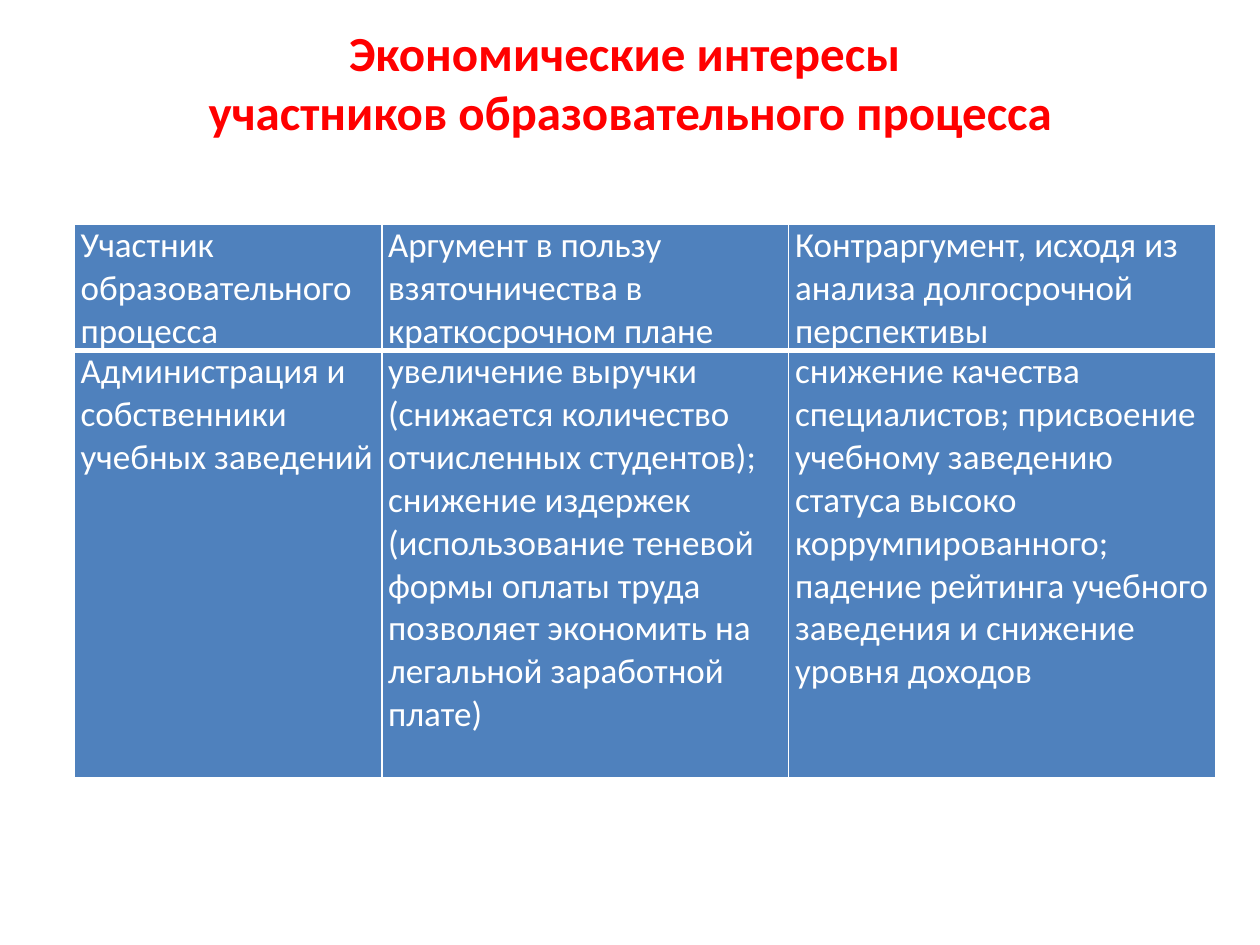
from lxml.etree import SubElement
from pptx import Presentation
from pptx.dml.color import RGBColor
from pptx.enum.text import MSO_ANCHOR, MSO_AUTO_SIZE, PP_ALIGN
from pptx.oxml.ns import qn
from pptx.util import Inches, Pt

RED = RGBColor(0xFF, 0x00, 0x00)
WHITE = RGBColor(0xFF, 0xFF, 0xFF)
BLUE = RGBColor(0x4F, 0x81, 0xBD)
FONT = "Calibri"

TITLE_LINES = ["Экономические интересы ", "участников образовательного процесса"]
COLUMN_WIDTHS = [2.44, 3.23, 3.39]
ROW_HEIGHTS = [0.94, 3.39]
INTERESTS = [
    [
        "Участник образовательного процесса",
        "Аргумент в пользу взяточничества в краткосрочном плане",
        "Контраргумент, исходя из анализа долгосрочной перспективы",
    ],
    [
        "Администрация и собственники учебных заведений",
        "увеличение выручки (снижается количество отчисленных студентов); "
        "снижение издержек (использование теневой формы оплаты труда "
        "позволяет экономить на легальной заработной плате)",
        "снижение качества специалистов; присвоение учебному заведению "
        "статуса высоко коррумпированного; падение рейтинга учебного "
        "заведения и снижение уровня доходов",
    ],
]


def add_run(paragraph, text, size, color, bold=False):
    run = paragraph.add_run()
    run.text = text
    run.font.name = FONT
    run.font.size = Pt(size)
    run.font.bold = bold
    run.font.color.rgb = color


def fill_title(title):
    title.left, title.top = Inches(0), Inches(0.13)
    title.width, title.height = Inches(10), Inches(1.04)
    frame = title.text_frame
    frame.word_wrap = True
    frame.auto_size = MSO_AUTO_SIZE.SHAPE_TO_FIT_TEXT
    frame.vertical_anchor = MSO_ANCHOR.TOP
    for index, line in enumerate(TITLE_LINES):
        paragraph = frame.add_paragraph() if index else frame.paragraphs[0]
        paragraph.alignment = PP_ALIGN.CENTER
        paragraph.space_before = Pt(0)
        add_run(paragraph, line, 28, RED, bold=True)


def set_borders(cell, widths):
    """Draw white borders; widths maps the sides L, R, T, B to points."""
    properties = cell._tc.get_or_add_tcPr()
    for position, (side, width) in enumerate(widths.items()):
        line = SubElement(properties, qn(f"a:ln{side}"), w=str(Pt(width)))
        fill = SubElement(line, qn("a:solidFill"))
        SubElement(fill, qn("a:srgbClr"), val=str(WHITE))
        properties.insert(position, line)  # borders precede the cell fill


def fill_cell(cell, text, is_header):
    cell.margin_left = cell.margin_right = Inches(0.05)
    cell.margin_top = cell.margin_bottom = Inches(0)
    cell.vertical_anchor = MSO_ANCHOR.TOP
    cell.fill.solid()
    cell.fill.fore_color.rgb = BLUE
    add_run(cell.text_frame.paragraphs[0], text, 20, WHITE)
    top, bottom = (1, 3) if is_header else (3, 1)
    set_borders(cell, {"L": 1, "R": 1, "T": top, "B": bottom})


def add_interests_table(slide):
    table = slide.shapes.add_table(
        len(ROW_HEIGHTS), len(COLUMN_WIDTHS), Inches(0.59), Inches(1.78),
        Inches(sum(COLUMN_WIDTHS)), Inches(sum(ROW_HEIGHTS)),
    ).table
    for column, width in zip(table.columns, COLUMN_WIDTHS):
        column.width = Inches(width)
    for row_index, (row, height) in enumerate(zip(table.rows, ROW_HEIGHTS)):
        row.height = Inches(height)
        for cell, text in zip(row.cells, INTERESTS[row_index]):
            fill_cell(cell, text, is_header=row_index == 0)


def main():
    presentation = Presentation()
    presentation.slide_width = Inches(10)
    presentation.slide_height = Inches(7.5)
    slide = presentation.slides.add_slide(presentation.slide_layouts[5])
    fill_title(slide.shapes.title)
    add_interests_table(slide)
    presentation.save("out.pptx")


if __name__ == "__main__":
    main()
